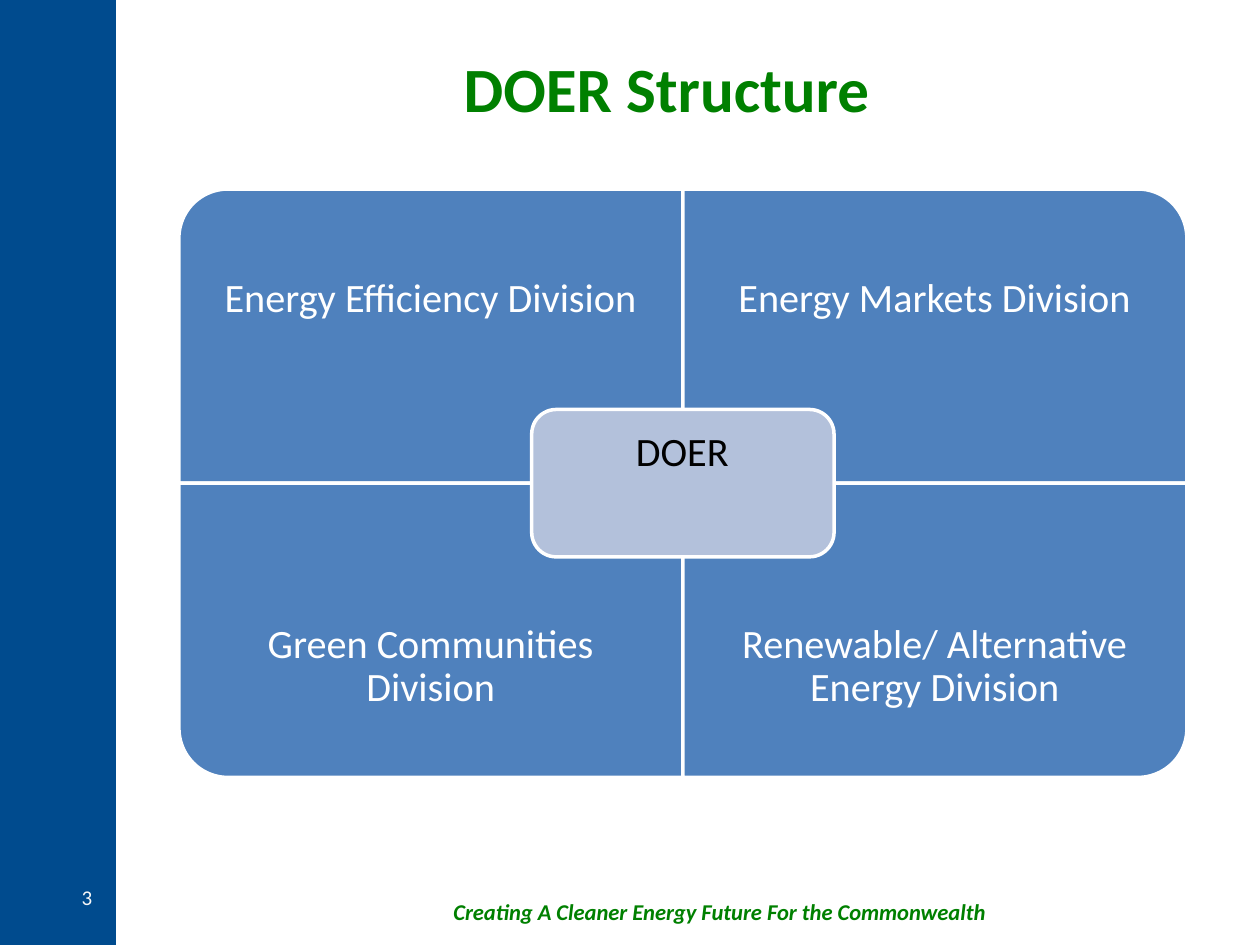
from dataclasses import dataclass

from pptx import Presentation
from pptx.dml.color import RGBColor
from pptx.enum.shapes import MSO_SHAPE as Shape
from pptx.enum.text import MSO_ANCHOR as Anchor, PP_ALIGN as Align
from pptx.util import Inches, Pt


@dataclass(frozen=True)
class Theme:
    font: str = "Calibri"
    band: str = "004B8E"
    green: str = "008000"
    quadrant: str = "4F81BD"
    center: str = "B3C1DB"
    white: str = "FFFFFF"
    black: str = "000000"
    page_number: str = "F8F8F8"
    title_size: float = 36
    label_size: float = 23
    footer_size: float = 12.9
    number_size: float = 12
    outline: float = 2


@dataclass(frozen=True)
class Area:
    left: float
    top: float
    width: float
    height: float

    def lengths(self) -> tuple:
        return tuple(Inches(v) for v in (self.left, self.top, self.width, self.height))


@dataclass(frozen=True)
class Style:
    size: float
    color: str
    bold: bool = False
    italic: bool = False
    align: Align = Align.CENTER
    anchor: Anchor = Anchor.MIDDLE
    margins: tuple = (0.1, 0.05)  # sides, top and bottom
    line_spacing: float = 1.0


@dataclass(frozen=True)
class Quadrant:
    label: str
    column: int
    row: int
    rotation: int


THEME = Theme()
MATRIX = Area(1.42, 1.5, 8, 4.67)
LABEL_HEIGHT = 1.75
QUADRANTS = (
    Quadrant("Energy Efficiency Division", 0, 0, 270),
    Quadrant("Energy Markets Division", 1, 0, 0),
    Quadrant("Green Communities Division", 0, 1, 180),
    Quadrant("Renewable/ Alternative Energy Division", 1, 1, 90),
)


def add_block(page, kind: Shape, area: Area, fill: str, outlined: bool = True):
    block = page.shapes.add_shape(kind, *area.lengths())
    block.shadow.inherit = False
    block.fill.solid()
    block.fill.fore_color.rgb = RGBColor.from_string(fill)
    if outlined:
        block.line.color.rgb = RGBColor.from_string(THEME.white)
        block.line.width = Pt(THEME.outline)
    else:
        block.line.fill.background()
    return block


def add_text(page, text: str, area: Area, style: Style) -> None:
    box = page.shapes.add_textbox(*area.lengths())
    frame = box.text_frame
    frame.word_wrap = True
    frame.vertical_anchor = style.anchor
    sides, ends = style.margins
    frame.margin_left = frame.margin_right = Inches(sides)
    frame.margin_top = frame.margin_bottom = Inches(ends)
    para = frame.paragraphs[0]
    para.text = text
    para.alignment = style.align
    para.line_spacing = style.line_spacing
    para.font.name = THEME.font
    para.font.size = Pt(style.size)
    para.font.bold = style.bold
    para.font.italic = style.italic
    para.font.color.rgb = RGBColor.from_string(style.color)


def add_quadrant(page, quadrant: Quadrant) -> None:
    width, height = MATRIX.width / 2, MATRIX.height / 2
    left = MATRIX.left + quadrant.column * width
    top = MATRIX.top + quadrant.row * height
    # A quarter turn swaps the sides around the same centre
    wide, high = (height, width) if quadrant.rotation % 180 else (width, height)
    area = Area(left + (width - wide) / 2, top + (height - high) / 2, wide, high)
    block = add_block(page, Shape.ROUND_1_RECTANGLE, area, THEME.quadrant)
    block.rotation = quadrant.rotation
    # Labels keep to the outer edge, clear of the centre block
    label_top = top + quadrant.row * (height - LABEL_HEIGHT)
    add_text(page, quadrant.label, Area(left, label_top, width, LABEL_HEIGHT),
             Style(THEME.label_size, THEME.white, margins=(0.18, 0.18), line_spacing=0.9))


def main() -> None:
    deck = Presentation()
    deck.slide_width, deck.slide_height = Inches(10), Inches(7.5)
    page = deck.slides.add_slide(deck.slide_layouts[6])

    # Side band, footer and title
    add_block(page, Shape.RECTANGLE, Area(0, 0, 0.92, 7.5), THEME.band, outlined=False)
    add_text(page, "Creating A Cleaner Energy Future For the Commonwealth",
             Area(3.5, 7.08, 4.75, 0.42),
             Style(THEME.footer_size, THEME.green, bold=True, italic=True,
                   align=Align.LEFT, anchor=Anchor.TOP))
    add_text(page, "DOER Structure", Area(1.08, 0.3, 8.42, 0.78),
             Style(THEME.title_size, THEME.green, bold=True))

    # Four divisions around the department
    for quadrant in QUADRANTS:
        add_quadrant(page, quadrant)
    add_block(page, Shape.ROUNDED_RECTANGLE, Area(4.22, 3.25, 2.4, 1.17), THEME.center)
    add_text(page, "DOER", Area(4.27, 3.31, 2.29, 1.05),
             Style(THEME.label_size, THEME.black, anchor=Anchor.TOP,
                   margins=(0.1, 0.12), line_spacing=0.9))

    # Page number
    add_text(page, "3", Area(0.25, 6.92, 0.58, 0.4),
             Style(THEME.number_size, THEME.page_number, align=Align.RIGHT))

    deck.save("out.pptx")


if __name__ == "__main__":
    main()
